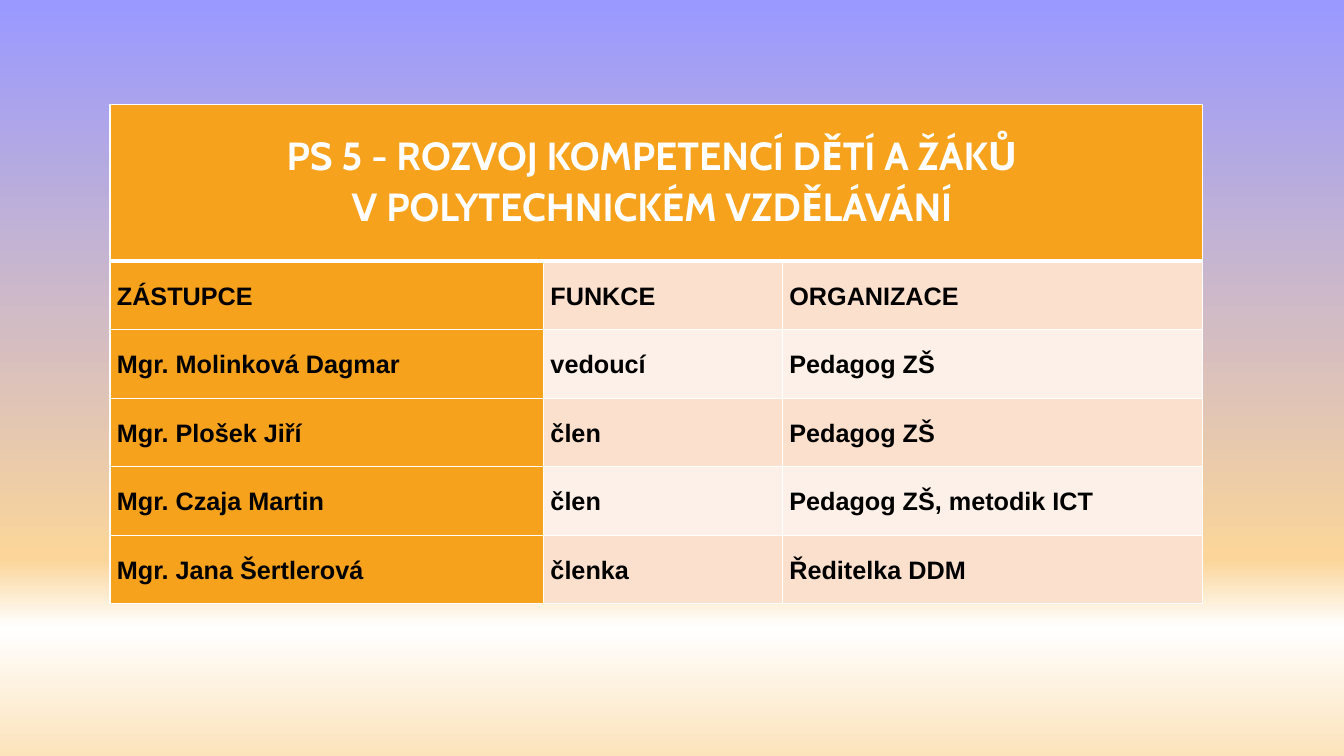
import pptx
import pptx.util
import pptx.dml.color
import pptx.enum.text
import pptx.oxml.ns
from lxml import etree

Inches = pptx.util.Inches
Pt = pptx.util.Pt
qn = pptx.oxml.ns.qn
ALIGN = pptx.enum.text.PP_ALIGN
ANCHOR = pptx.enum.text.MSO_ANCHOR

COLORS = {
    "orange": "F6A21D", "peach": "FBE0CD", "cream": "FDF0E8",
    "white": "FFFFFF", "black": "000000",
    "sky": "9999FF", "sand": "FBD599", "dune": "FCE3BB",
}
BACKGROUND_STOPS = [(0, "sky"), (74, "sand"), (83, "white"), (100, "dune")]
COLUMN_WIDTHS = [4.3, 2.37, 4.17]
TITLE_HEIGHT, MEMBER_HEIGHT = 1.55, 0.68
TITLE = ["PS 5 - ROZVOJ KOMPETENCÍ DĚTÍ A ŽÁKŮ ", "V POLYTECHNICKÉM VZDĚLÁVÁNÍ "]
MEMBERS = [
    ("ZÁSTUPCE", "FUNKCE", "ORGANIZACE"),
    ("Mgr. Molinková Dagmar", "vedoucí", "Pedagog ZŠ"),
    ("Mgr. Plošek Jiří", "člen", "Pedagog ZŠ"),
    ("Mgr. Czaja Martin", "člen", "Pedagog ZŠ, metodik ICT"),
    ("Mgr. Jana Šertlerová", "členka", "Ředitelka DDM"),
]
TITLE_FORMAT = {
    "font": {"name": "Cabin", "size": Pt(28), "bold": True},
    "paragraph": {"alignment": ALIGN.CENTER, "line_spacing": 1.07},
    "cell": {"vertical_anchor": ANCHOR.TOP, "margin_top": Inches(0.24)},
    "color": "white",
}
MEMBER_FORMAT = {
    "font": {"name": "Arial", "size": Pt(18), "bold": True},
    "paragraph": {"alignment": ALIGN.LEFT, "line_spacing": 1.07},
    "cell": {"vertical_anchor": ANCHOR.MIDDLE, "margin_top": 0},
    "color": "black",
}


def rgb(color):
    """Return the named colour as an RGB value."""
    return pptx.dml.color.RGBColor.from_string(COLORS[color])


def apply(target, values):
    """Set each attribute of the target from the given values."""
    for attribute, value in values.items():
        setattr(target, attribute, value)


def paint_background(slide):
    """Fill the slide with the vertical gradient."""
    fill = slide.background.fill
    fill.gradient()
    fill.gradient_angle = 270
    stops = next(slide.element.iter(qn("a:gsLst")))
    for stop in list(stops):
        stops.remove(stop)
    for percent, color in BACKGROUND_STOPS:
        stop = etree.SubElement(stops, qn("a:gs"), pos=str(percent * 1000))
        etree.SubElement(stop, qn("a:srgbClr"), val=COLORS[color])


def draw_borders(cell, widths):
    """Give the cell white borders of the widths listed by side."""
    properties = cell._tc.get_or_add_tcPr()
    for side, width in widths.items():
        border = etree.SubElement(properties, qn(f"a:ln{side}"), w=str(Pt(width)))
        solid = etree.SubElement(border, qn("a:solidFill"))
        etree.SubElement(solid, qn("a:srgbClr"), val=COLORS["white"])


def fill_cell(cell, lines, style, background):
    """Write the lines into the cell in the given style."""
    apply(cell, {"margin_left": Inches(0.07), "margin_right": Inches(0.07), "margin_bottom": 0})
    apply(cell, style["cell"])
    cell.fill.solid()
    cell.fill.fore_color.rgb = rgb(background)
    cell.text_frame.text = "\n".join(lines)
    for paragraph in cell.text_frame.paragraphs:
        apply(paragraph, style["paragraph"])
        for run in paragraph.runs:
            apply(run.font, style["font"])
            run.font.color.rgb = rgb(style["color"])


def add_members_table(slide):
    """Add the working group table with its merged title row."""
    heights = [TITLE_HEIGHT] + [MEMBER_HEIGHT] * len(MEMBERS)
    members = slide.shapes.add_table(
        len(heights), len(COLUMN_WIDTHS), Inches(1.09), Inches(1.04),
        Inches(sum(COLUMN_WIDTHS)), Inches(sum(heights))).table
    for column, width in zip(members.columns, COLUMN_WIDTHS):
        column.width = Inches(width)
    for index, (row, height) in enumerate(zip(members.rows, heights)):
        row.height = Inches(height)
        for cell in row.cells:
            draw_borders(cell, {"L": 1, "R": 1, "T": 3 if index == 1 else 1,
                                "B": 3 if index == 0 else 1})
    title = members.cell(0, 0)
    title.merge(members.cell(0, len(COLUMN_WIDTHS) - 1))
    fill_cell(title, TITLE, TITLE_FORMAT, "orange")
    for row, member in enumerate(MEMBERS, 1):
        band = "peach" if row % 2 else "cream"
        for column, text in enumerate(member):
            fill_cell(members.cell(row, column), [text], MEMBER_FORMAT,
                      band if column else "orange")


def main():
    """Build and save the slide."""
    deck = pptx.Presentation()
    apply(deck, {"slide_width": Inches(13.33), "slide_height": Inches(7.5)})
    slide = deck.slides.add_slide(deck.slide_layouts[6])
    paint_background(slide)
    add_members_table(slide)
    deck.save("out.pptx")


if __name__ == "__main__":
    main()
